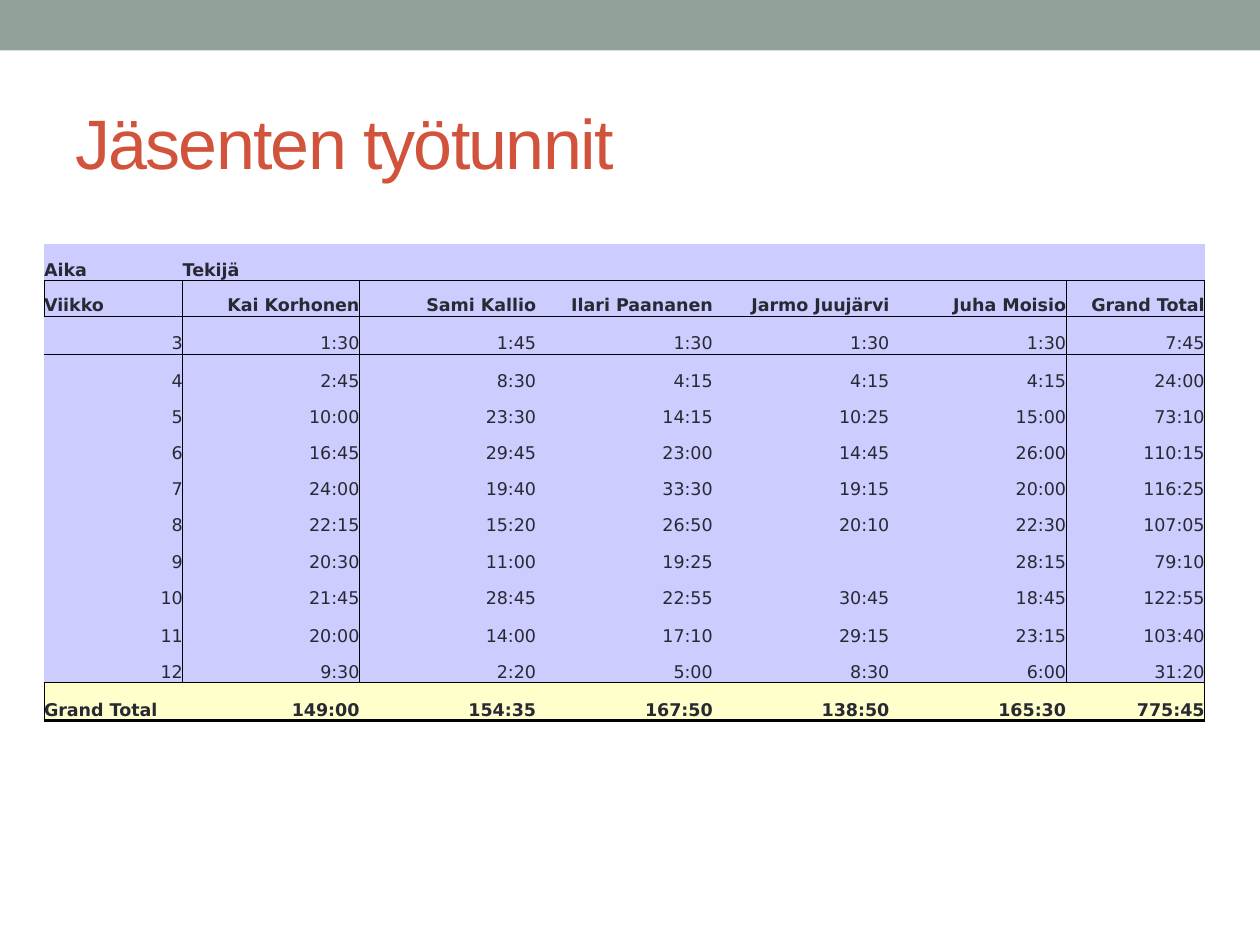
from dataclasses import dataclass

from lxml.etree import SubElement as Sub
from pptx import Presentation
from pptx.dml.color import RGBColor as RGB
from pptx.enum.shapes import MSO_SHAPE as Shape
from pptx.enum.text import MSO_ANCHOR as Anchor, PP_ALIGN as Align
from pptx.oxml.ns import qn
from pptx.util import Inches, Pt

PLAIN = "{2D5ABB26-0587-4C30-8999-92F81FD0307C}"  # no style, no grid


@dataclass(frozen=True)
class Theme:
    band: str = "93A299"
    title: str = "D2533C"
    ink: str = "292934"
    body: str = "CCCCFF"
    total: str = "FFFFCC"
    rule: str = "000000"
    head_font: str = "Arial"
    cell_font: str = "DejaVu Sans"
    head_size: int = 40
    cell_size: int = 10
    thin: float = 0.5
    thick: float = 1.5


HEAD = [
    ["Aika", "Tekijä", "", "", "", "", ""],
    ["Viikko", "Kai Korhonen", "Sami Kallio", "Ilari Paananen",
     "Jarmo Juujärvi", "Juha Moisio", "Grand Total"],
]
WEEKS = [
    ["3", "1:30", "1:45", "1:30", "1:30", "1:30", "7:45"],
    ["4", "2:45", "8:30", "4:15", "4:15", "4:15", "24:00"],
    ["5", "10:00", "23:30", "14:15", "10:25", "15:00", "73:10"],
    ["6", "16:45", "29:45", "23:00", "14:45", "26:00", "110:15"],
    ["7", "24:00", "19:40", "33:30", "19:15", "20:00", "116:25"],
    ["8", "22:15", "15:20", "26:50", "20:10", "22:30", "107:05"],
    ["9", "20:30", "11:00", "19:25", "", "28:15", "79:10"],
    ["10", "21:45", "28:45", "22:55", "30:45", "18:45", "122:55"],
    ["11", "20:00", "14:00", "17:10", "29:15", "23:15", "103:40"],
    ["12", "9:30", "2:20", "5:00", "8:30", "6:00", "31:20"],
]
TOTAL = ["Grand Total", "149:00", "154:35", "167:50", "138:50", "165:30", "775:45"]
ROWS = HEAD + WEEKS + [TOTAL]
LAST = len(ROWS) - 1
TALL = {2, 3, 8, 10, LAST}


class Deck:
    def __init__(self, theme):
        self.theme = theme
        self.show = Presentation()
        self.show.slide_width, self.show.slide_height = Inches(10), Inches(7.5)
        self.slide = self.show.slides.add_slide(self.show.slide_layouts[6])

    def font(self, para, name, size, color, bold=False):
        font = para.font
        font.name, font.size, font.bold = name, Pt(size), bold
        font.color.rgb = RGB.from_string(color)
        return font

    def band(self, *box):
        bar = self.slide.shapes.add_shape(Shape.RECTANGLE, *map(Inches, box))
        bar.shadow.inherit = False
        bar.fill.solid()
        bar.fill.fore_color.rgb = RGB.from_string(self.theme.band)
        bar.line.fill.background()

    def title(self, text, *box):
        frame = self.slide.shapes.add_textbox(*map(Inches, box)).text_frame
        frame.word_wrap = True
        frame.vertical_anchor = Anchor.MIDDLE
        para = frame.paragraphs[0]
        para.text = text
        look = self.theme
        font = self.font(para, look.head_font, look.head_size, look.title)
        font._element.set("spc", "-100")

    def edges(self, row, col):
        """Give the width of each ruled side of a cell."""
        look = self.theme
        inner = 0 < row < LAST
        sides = {
            "L": col in (1, 6) and inner or col == 0 and row in (1, LAST),
            "R": col in (0, 5) and inner or col == 6 and row > 0,
            "T": row in (1, 2, LAST),
            "B": row in (0, 1, LAST - 1, LAST),
        }
        return {side: look.thick if (side, row) == ("B", LAST) else look.thin
                for side, ruled in sides.items() if ruled}

    def border(self, cell, edges):
        props = cell._tc.get_or_add_tcPr()
        for spot, (side, width) in enumerate(edges.items()):
            line = Sub(props, qn(f"a:ln{side}"), w=str(Pt(width)))
            Sub(Sub(line, qn("a:solidFill")), qn("a:srgbClr"), val=self.theme.rule)
            props.insert(spot, line)  # lines come before the fill

    def cell(self, cell, text, row, col):
        look = self.theme
        cell.margin_left = cell.margin_right = cell.margin_top = cell.margin_bottom = 0
        cell.vertical_anchor = Anchor.BOTTOM
        cell.fill.solid()
        cell.fill.fore_color.rgb = RGB.from_string(
            look.total if row == LAST else look.body)
        para = cell.text_frame.paragraphs[0]
        head = row in (0, 1, LAST)
        if text:
            para.text = text
        else:
            Sub(para._p, qn("a:endParaRPr"), sz=str(look.cell_size * 100))
        left = row == 0 or col == 0 and head
        para.alignment = Align.LEFT if left else Align.RIGHT
        self.font(para, look.cell_font, look.cell_size, look.ink, head)
        self.border(cell, self.edges(row, col))

    def table(self, rows, left, top, width, height, side=1.1, tall=0.3):
        """Add the hours table; middle columns and short rows share the rest."""
        count = len(rows[0])
        grid = self.slide.shapes.add_table(
            len(rows), count, *map(Inches, (left, top, width, height))).table
        grid.first_row = grid.horz_banding = False
        grid._tbl.tblPr.find(qn("a:tableStyleId")).text = PLAIN
        mid = (width - 2 * side) / (count - 2)
        short = (height - tall * len(TALL)) / (len(rows) - len(TALL))
        for col, part in enumerate(grid.columns):
            part.width = Inches(side if col in (0, count - 1) else mid)
        for row, texts in enumerate(rows):
            grid.rows[row].height = Inches(tall if row in TALL else short)
            for col, text in enumerate(texts):
                self.cell(grid.cell(row, col), text, row, col)


def main():
    deck = Deck(Theme())
    deck.band(0, 0, 10, 0.4)
    deck.title("Jäsenten työtunnit", 0.5, 0.58, 9, 1.08)
    deck.table(ROWS, 0.35, 1.94, 9.21, 3.78)
    deck.show.save("out.pptx")


if __name__ == "__main__":
    main()
